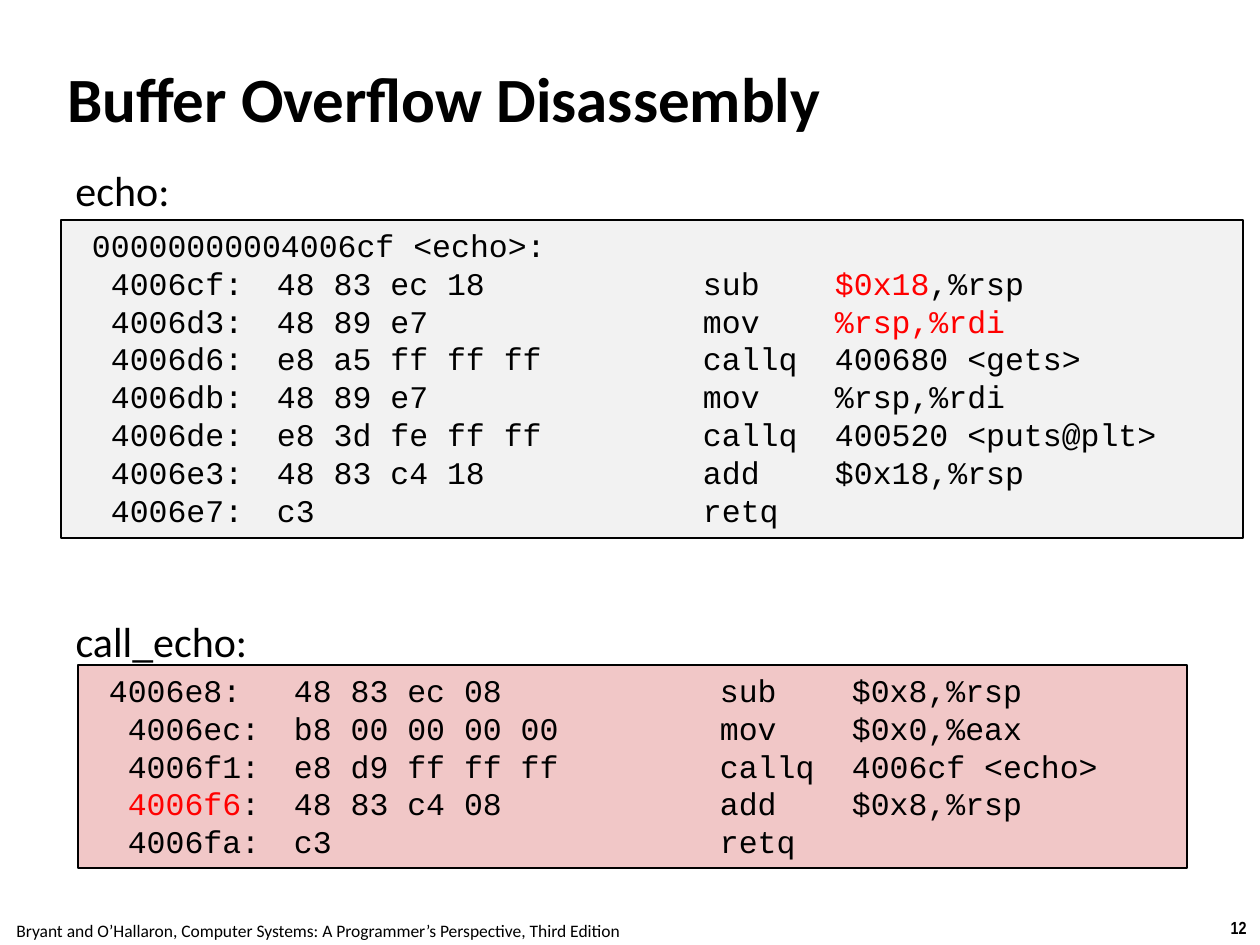
import dataclasses

import pptx
import pptx.dml.color
import pptx.enum.shapes
import pptx.enum.text
import pptx.oxml.ns
import pptx.util
from lxml import etree

EMU_PER_PX = 914400 / 126
ACCENT_MARK = "|"
TAB_STOPS = (185, 611, 743)

ECHO_LINES = (
    "00000000004006cf <echo>:",
    " 4006cf:\t48 83 ec 18\tsub\t|$0x18|,%rsp",
    " 4006d3:\t48 89 e7\tmov\t|%rsp,%rdi|",
    " 4006d6:\te8 a5 ff ff ff\tcallq\t400680 <gets>",
    " 4006db:\t48 89 e7\tmov\t%rsp,%rdi",
    " 4006de:\te8 3d fe ff ff\tcallq\t400520 <puts@plt>",
    " 4006e3:\t48 83 c4 18\tadd\t$0x18,%rsp",
    " 4006e7:\tc3\tretq",
)
CALL_ECHO_LINES = (
    "4006e8:\t48 83 ec 08\tsub\t$0x8,%rsp",
    " 4006ec:\tb8 00 00 00 00\tmov\t$0x0,%eax",
    " 4006f1:\te8 d9 ff ff ff\tcallq\t4006cf <echo>",
    " |4006f6|:\t48 83 c4 08\tadd\t$0x8,%rsp",
    " 4006fa:\tc3\tretq",
)


@dataclasses.dataclass(frozen=True)
class Theme:
    ink: str = "000000"
    accent: str = "FF0000"
    echo_fill: str = "F2F2F2"
    call_echo_fill: str = "F1C7C7"
    body_font: str = "Calibri"
    code_font: str = "Courier New"
    number_font: str = "Arial Narrow"
    title_size: int = 36
    label_size: int = 24
    code_size: int = 18
    footer_size: int = 10
    border: int = 1


THEME = Theme()


def px(length):
    return pptx.util.Emu(round(length * EMU_PER_PX))


def rgb(value):
    return pptx.dml.color.RGBColor.from_string(value)


def add_span(para, text, font, size, color=THEME.ink, bold=False):
    span = para.add_run()
    span.text = text
    span.font.name = font
    span.font.size = pptx.util.Pt(size)
    span.font.color.rgb = rgb(color)
    span.font.bold = bold


def set_insets(frame, left, top, right, bottom):
    frame.margin_left, frame.margin_top = px(left), px(top)
    frame.margin_right, frame.margin_bottom = px(right), px(bottom)


def add_tab_stops(para):
    properties = para._p.get_or_add_pPr()
    tab_list = etree.SubElement(properties, pptx.oxml.ns.qn("a:tabLst"))
    for stop in TAB_STOPS:
        etree.SubElement(tab_list, pptx.oxml.ns.qn("a:tab"), pos=str(px(stop)), algn="l")


def add_title(page, bounds, text):
    box = page.shapes.add_textbox(*map(px, bounds))
    frame = box.text_frame
    frame.word_wrap = True
    frame.vertical_anchor = pptx.enum.text.MSO_ANCHOR.MIDDLE
    set_insets(frame, 5, 5, 5, 5)
    add_span(frame.paragraphs[0], text, THEME.body_font, THEME.title_size, bold=True)


def add_label(page, bounds, text, size, font=THEME.body_font, bold=False):
    box = page.shapes.add_textbox(*map(px, bounds))
    box.text_frame.word_wrap = False
    para = box.text_frame.paragraphs[0]
    para.alignment = pptx.enum.text.PP_ALIGN.CENTER
    add_span(para, text, font, size, bold=bold)


def add_listing(page, bounds, fill, lines):
    box = page.shapes.add_shape(pptx.enum.shapes.MSO_SHAPE.RECTANGLE, *map(px, bounds))
    box.shadow.inherit = False
    box.fill.solid()
    box.fill.fore_color.rgb = rgb(fill)
    box.line.color.rgb = rgb(THEME.ink)
    box.line.width = pptx.util.Pt(THEME.border)
    frame = box.text_frame
    frame.word_wrap = True
    frame.vertical_anchor = pptx.enum.text.MSO_ANCHOR.TOP
    set_insets(frame, 31, 6, 13, 6)
    for row, line in enumerate(lines):
        para = frame.add_paragraph() if row else frame.paragraphs[0]
        para.alignment = pptx.enum.text.PP_ALIGN.LEFT
        add_tab_stops(para)
        for index, part in enumerate(line.split(ACCENT_MARK)):
            if part:
                color = THEME.accent if index % 2 else THEME.ink
                add_span(para, part, THEME.code_font, THEME.code_size, color)


def main():
    deck = pptx.Presentation()
    deck.slide_width, deck.slide_height = px(1260), px(945)
    page = deck.slides.add_slide(deck.slide_layouts[6])
    add_label(page, (1217, 911, 43, 34), "12", THEME.footer_size, THEME.number_font, bold=True)
    add_label(
        page,
        (-2, 914, 640, 34),
        "Bryant and O’Hallaron, Computer Systems: A Programmer’s Perspective, Third Edition",
        THEME.footer_size,
    )
    add_title(page, (62, 58, 978, 79), "Buffer Overflow Disassembly")
    add_listing(page, (61, 220, 1182, 318), THEME.echo_fill, ECHO_LINES)
    add_listing(page, (78, 665, 1109, 203), THEME.call_echo_fill, CALL_ECHO_LINES)
    add_label(page, (62, 158, 121, 63), "echo:", THEME.label_size)
    add_label(page, (62, 609, 199, 63), "call_echo:", THEME.label_size)
    deck.save("out.pptx")


if __name__ == "__main__":
    main()
